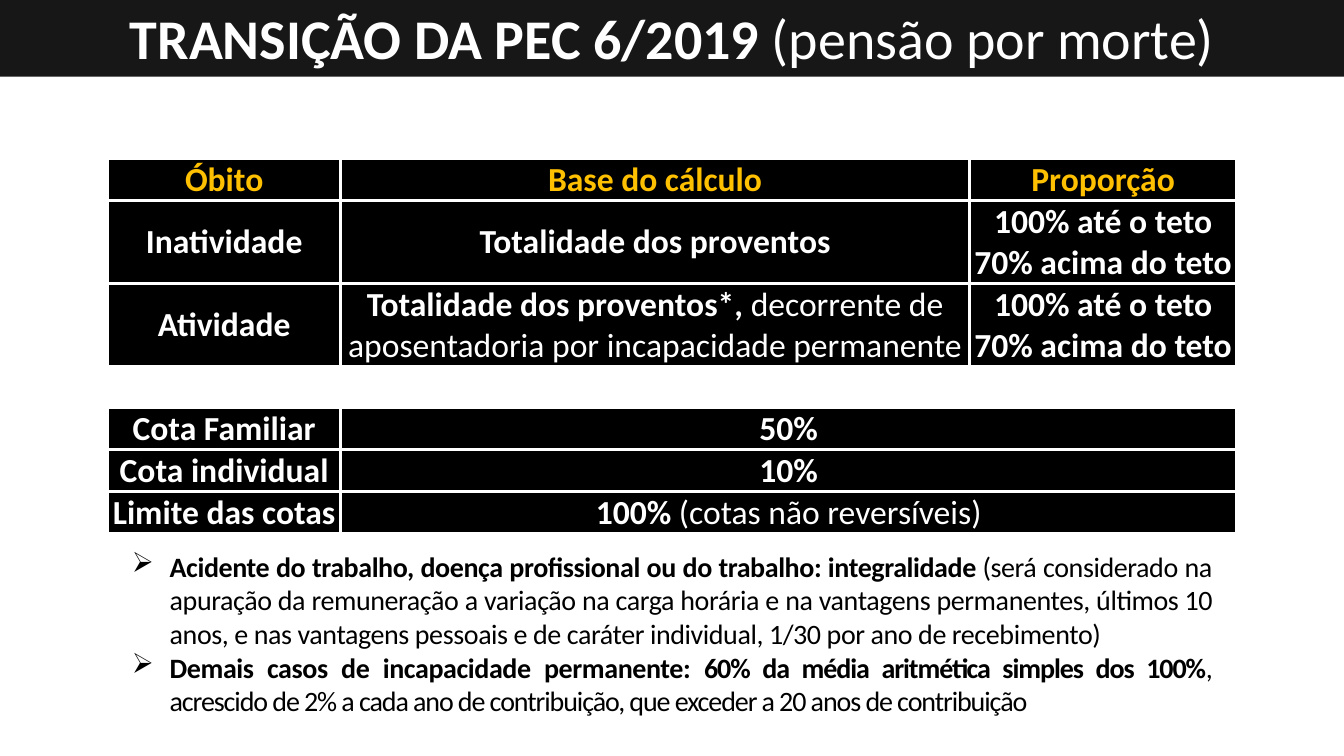
from dataclasses import dataclass

from lxml.etree import SubElement
from pptx import Presentation
from pptx.dml.color import RGBColor
from pptx.enum.text import MSO_ANCHOR as Anchor, MSO_AUTO_SIZE as AutoSize, PP_ALIGN as Align
from pptx.oxml.ns import qn
from pptx.util import Pt


@dataclass(frozen=True)
class Theme:
    font: str = "Calibri"
    band: RGBColor = RGBColor(0x18, 0x17, 0x17)
    black: RGBColor = RGBColor(0, 0, 0)
    white: RGBColor = RGBColor(255, 255, 255)
    gold: RGBColor = RGBColor(0xFF, 0xC0, 0)
    title_size: int = 40
    table_size: int = 24
    note_size: int = 20
    border: float = 2.25


THEME = Theme()

# Text is a list of paragraphs; each paragraph is a list of (text, bold, spacing)
TITLE = [("TRANSIÇÃO DA PEC 6/2019 ", True, 0), ("(pensão por morte)", False, 0)]


def bold(*lines):
    return [[(line, True, 0)] for line in lines]


SHARE = bold("100% até o teto", "70% acima do teto")
ROWS = [
    [bold("Óbito"), bold("Base do cálculo"), bold("Proporção")],
    [bold("Inatividade"), bold("Totalidade dos proventos"), SHARE],
    [bold("Atividade"),
     [[("Totalidade dos proventos*, ", True, 0),
       ("decorrente de aposentadoria por incapacidade permanente", False, 0)]],
     SHARE],
    [],
    [bold("Cota Familiar"), bold("50%")],
    [bold("Cota individual"), bold("10%")],
    [bold("Limite das cotas"),
     [[("100% ", True, 0), ("(cotas não reversíveis)", False, 0)]]],
]
COLUMN_WIDTHS = [166.3, 449.3, 190.8]
LINE_HEIGHT = 29.4

NOTES = [
    [("Acidente do trabalho, doença profissional ou do trabalho: integralidade ", True, -0.3),
     ("(será considerado na apuração da remuneração a variação na carga horária e na "
      "vantagens permanentes, últimos 10 anos, e nas vantagens pessoais e de caráter "
      "individual, 1/30 por ano de recebimento)", False, -0.3)],
    [("Demais casos de incapacidade permanente: ", True, -0.3),
     ("60% da média aritmética simples dos 100%", True, -0.8),
     (", acrescido de 2% a cada ano de contribuição, que exceder a 20 anos de contribuição",
      False, -0.8)],
]


def set_all(target, values):
    for name, value in values.items():
        setattr(target, name, value)


def write(frame, paragraphs, size, color, align, bullet=None, indent=0):
    for index, spans in enumerate(paragraphs):
        para = frame.add_paragraph() if index else frame.paragraphs[0]
        set_all(para, {"alignment": align, "space_before": Pt(0), "line_spacing": 1.0})
        if bullet:
            props = para._p.get_or_add_pPr()
            props.set("marL", str(Pt(indent)))
            props.set("indent", str(-Pt(indent)))
            SubElement(props, qn("a:buChar"), char=bullet)
        for text, is_bold, spacing in spans:
            span = para.add_run()
            span.text = text
            set_all(span.font, {"name": THEME.font, "size": Pt(size), "bold": is_bold})
            span.font.color.rgb = color
            if spacing:
                span._r.get_or_add_rPr().set("spc", str(round(spacing * 100)))


def add_title(page, left, top, width, height):
    title = page.shapes.title
    set_all(title, {"left": Pt(left), "top": Pt(top), "width": Pt(width), "height": Pt(height)})
    title.fill.solid()
    title.fill.fore_color.rgb = THEME.band
    set_all(title.text_frame, {"vertical_anchor": Anchor.MIDDLE, "word_wrap": True,
                               "auto_size": AutoSize.NONE})
    write(title.text_frame, [TITLE], THEME.title_size, THEME.white, Align.CENTER)


def add_borders(cell):
    props = cell._tc.get_or_add_tcPr()
    for side in ("lnL", "lnR", "lnT", "lnB"):
        line = SubElement(props, qn(f"a:{side}"), w=str(Pt(THEME.border)))
        fill = SubElement(line, qn("a:solidFill"))
        SubElement(fill, qn("a:srgbClr"), val=str(THEME.white))


def add_rules_table(page, left, top):
    heights = [LINE_HEIGHT * max(map(len, row), default=1) for row in ROWS]
    table = page.shapes.add_table(len(ROWS), len(COLUMN_WIDTHS), Pt(left), Pt(top),
                                  Pt(sum(COLUMN_WIDTHS)), Pt(sum(heights))).table
    set_all(table, {"first_row": False, "horz_banding": False})
    for column, width in zip(table.columns, COLUMN_WIDTHS):
        column.width = Pt(width)
    for index, (contents, height) in enumerate(zip(ROWS, heights)):
        table.rows[index].height = Pt(height)
        # Rows with two entries stretch the second over the last two columns
        if len(contents) == 2:
            table.cell(index, 1).merge(table.cell(index, 2))
        for cell in table.rows[index].cells:
            add_borders(cell)
            if contents:
                cell.fill.solid()
                cell.fill.fore_color.rgb = THEME.black
            else:
                cell.fill.background()
        for column, paragraphs in enumerate(contents):
            cell = table.cell(index, column)
            set_all(cell, {"vertical_anchor": Anchor.MIDDLE, "margin_left": Pt(0.7),
                           "margin_right": Pt(0.7), "margin_top": Pt(0.7), "margin_bottom": 0})
            write(cell.text_frame, paragraphs, THEME.table_size,
                  THEME.white if index else THEME.gold, Align.CENTER)


def add_notes(page, left, top, width, height):
    box = page.shapes.add_textbox(Pt(left), Pt(top), Pt(width), Pt(height))
    box.text_frame.word_wrap = True
    write(box.text_frame, NOTES, THEME.note_size, THEME.black, Align.JUSTIFY,
          bullet="➢", indent=27)


def main():
    deck = Presentation()
    set_all(deck, {"slide_width": Pt(960), "slide_height": Pt(540)})
    page = deck.slides.add_slide(deck.slide_layouts[5])
    # Title band
    add_title(page, -0.7, -2.2, 961.4, 56.9)
    # Benefit rules and quotas
    add_rules_table(page, 77, 113)
    # Explanatory notes
    add_notes(page, 87.1, 388.8, 785.5, 152.6)
    deck.save("out.pptx")


if __name__ == "__main__":
    main()
